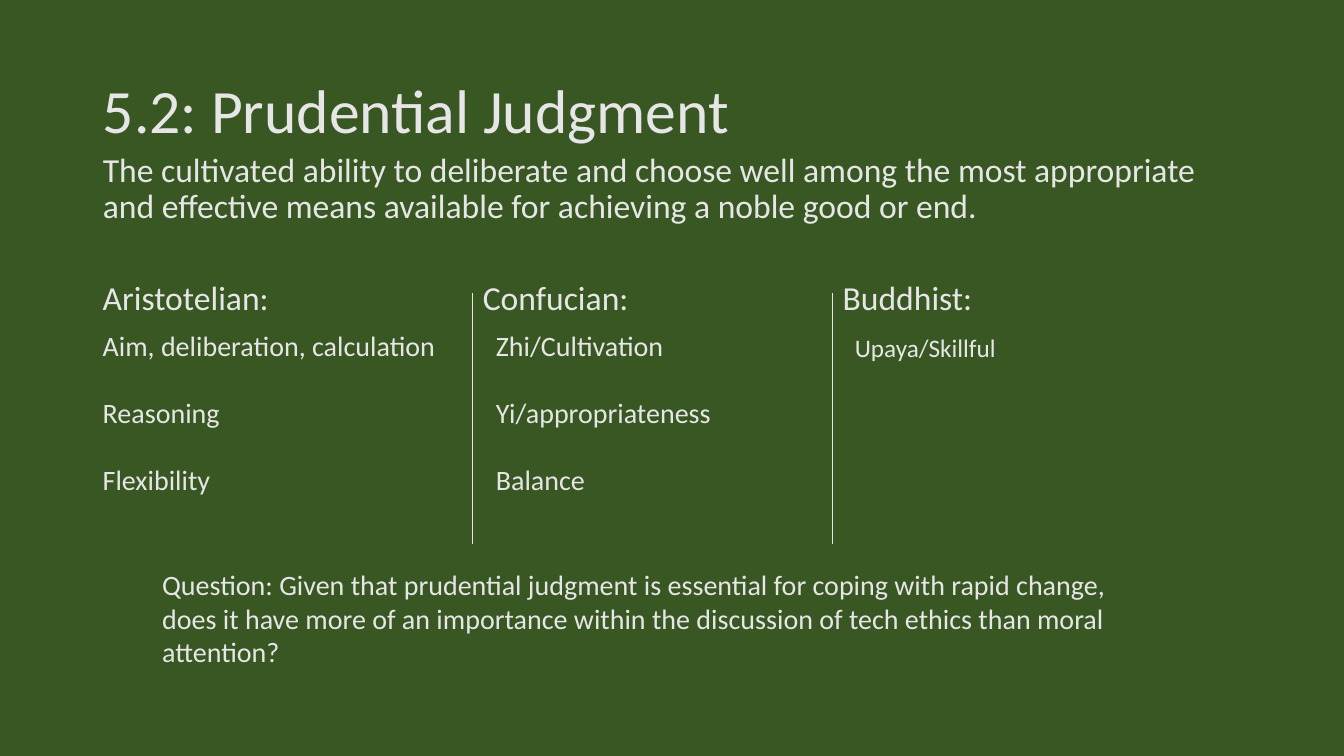
import pptx
import pptx.dml.color
import pptx.enum.shapes
import pptx.enum.text
import pptx.oxml
import pptx.util
from pptx.util import Inches

GREEN = "385723"
LIGHT = "E7E6E6"
FONT = "Calibri"
LEFT = 0.92

# heading, heading left, items left, items top, width, item size, items
COLUMNS = [
    ("Aristotelian:", LEFT, LEFT, 3.21, 3.54, 20,
     ["Aim, deliberation, calculation", "Reasoning", "Flexibility"]),
    ("Confucian:", 4.69, 4.82, 3.21, 2.36, 20,
     ["Zhi/Cultivation", "Yi/appropriateness", "Balance"]),
    ("Buddhist:", 8.26, 8.38, 3.25, 1.61, 18, ["Upaya/Skillful"]),
]


def rgb(value):
    return pptx.dml.color.RGBColor.from_string(value)


def write(tf, lines, size, gap=0, before=0, spacing=1.0, wrap=True, anchor="TOP"):
    """Fill a text frame, one paragraph per line, with gap points between."""
    tf.word_wrap = wrap
    tf.auto_size = pptx.enum.text.MSO_AUTO_SIZE.NONE
    tf.vertical_anchor = getattr(pptx.enum.text.MSO_ANCHOR, anchor)
    for i, line in enumerate(lines):
        p = tf.add_paragraph() if i else tf.paragraphs[0]
        p.alignment = pptx.enum.text.PP_ALIGN.LEFT
        p.line_spacing = spacing
        p.space_before = pptx.util.Pt(gap if i else before)
        r = p.add_run()
        r.text = line
        r.font.size = pptx.util.Pt(size)
        r.font.name = FONT
        r.font.color.rgb = rgb(LIGHT)


def fill_placeholder(sp, left, top, width, height, text, size, **fmt):
    sp.left, sp.top = Inches(left), Inches(top)
    sp.width, sp.height = Inches(width), Inches(height)
    write(sp.text_frame, [text], size, spacing=0.9, **fmt)


def remove_bullets(tf):
    for p in tf.paragraphs:
        pPr = p._p.get_or_add_pPr()
        pPr.set("marL", "0")
        pPr.set("indent", "0")
        pptx.oxml.ns  # namespace helper for the bullet element
        pPr.append(pptx.oxml.xmlchemy.OxmlElement("a:buNone"))


def add_text(s, left, top, width, height, lines, size, **fmt):
    sp = s.shapes.add_textbox(
        Inches(left), Inches(top), Inches(width), Inches(height))
    write(sp.text_frame, lines, size, **fmt)


def add_divider(s, x, top, bottom):
    line = s.shapes.add_connector(
        pptx.enum.shapes.MSO_CONNECTOR.STRAIGHT,
        Inches(x), Inches(top), Inches(x), Inches(bottom))
    line.line.color.rgb = rgb(LIGHT)
    line.line.width = pptx.util.Pt(0.5)
    line._element.spPr.append(pptx.oxml.xmlchemy.OxmlElement("a:effectLst"))


def main():
    prs = pptx.Presentation()
    prs.slide_width, prs.slide_height = Inches(13.33), Inches(7.5)
    s = prs.slides.add_slide(prs.slide_layouts[1])
    s.background.fill.solid()
    s.background.fill.fore_color.rgb = rgb(GREEN)

    # Title and definition
    fill_placeholder(s.shapes.title, LEFT, 0.4, 11.5, 1.45,
                     "5.2: Prudential Judgment", 44, anchor="MIDDLE")
    body = s.placeholders[1]
    fill_placeholder(
        body, LEFT, 1.47, 11.5, 0.93,
        "The cultivated ability to deliberate and choose well among the most "
        "appropriate and effective means available for achieving a noble good "
        "or end.", 24, before=10)
    remove_bullets(body.text_frame)

    # Three traditions, with a divider before all but the first
    for i, (name, x, items_x, top, width, size, items) in enumerate(COLUMNS):
        add_text(s, x, 2.7, 1.94, 0.5, [name], 24, wrap=False)
        add_text(s, items_x, top, width, 1.78, items, size, gap=24, wrap=False)
        if i:
            add_divider(s, x, 2.91, 5.4)

    # Discussion question
    add_text(
        s, 1.51, 5.58, 9.82, 1.11,
        ["Question: Given that prudential judgment is essential for coping with "
         "rapid change, does it have more of an importance within the discussion "
         "of tech ethics than moral attention?"], 20)

    prs.save("out.pptx")


if __name__ == "__main__":
    main()
